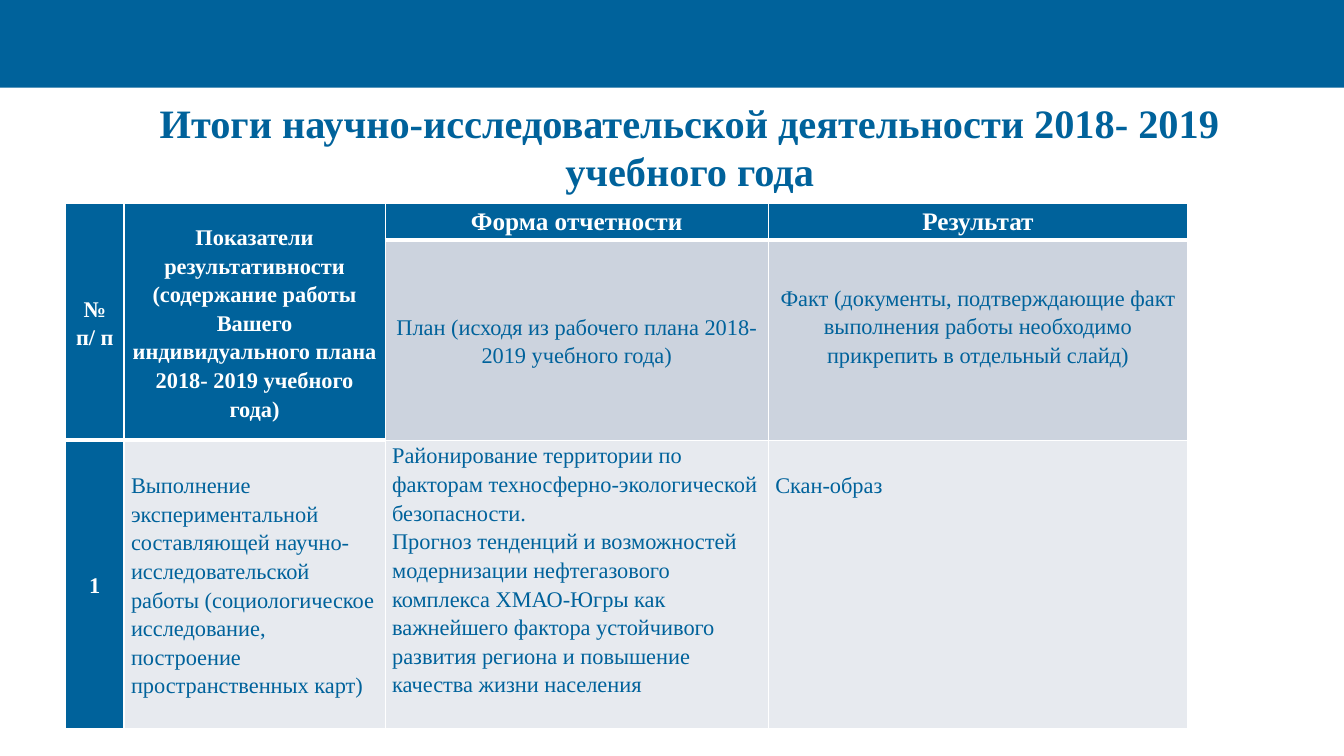
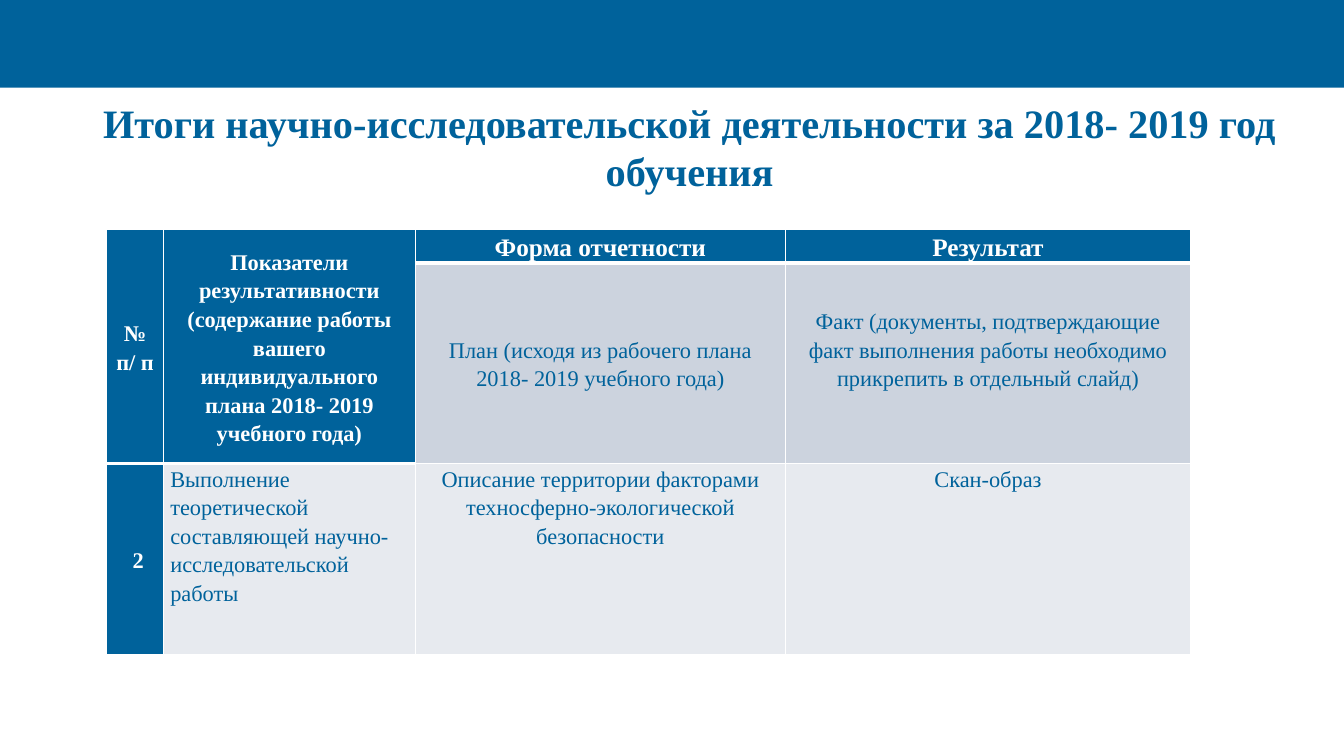
import pptx
import pptx.dml.color
import pptx.enum.shapes
import pptx.enum.text
import pptx.oxml
import pptx.oxml.ns
import pptx.util

Inches = pptx.util.Inches
Pt = pptx.util.Pt
ALIGN = pptx.enum.text.PP_ALIGN
ANCHOR = pptx.enum.text.MSO_ANCHOR

FONT = "Times New Roman"
BLUE, WHITE, GREY, PALE = "00629B", "FFFFFF", "CCD3DE", "E7EAEF"
INSET = 0.07
TEXT_LINE = 0.29
PLAN = "План (исходя из рабочего плана 2018- 2019 учебного года)"
FACT = ("Факт (документы, подтверждающие факт выполнения работы "
        "необходимо прикрепить в отдельный слайд)")
INDICATORS = ("Показатели результативности\n(содержание работы {} "
              "индивидуального плана 2018- 2019 учебного года)")


def rgb(color):
    """Turn a hex string into a colour."""
    return pptx.dml.color.RGBColor.from_string(color)


def write(tf, text, size=16, color=BLUE, bold=False, align=ALIGN.CENTER, spacing=1.15):
    """Fill a text frame with one formatted paragraph per line of text."""
    tf.word_wrap = True
    for i, line in enumerate(text.split("\n")):
        p = tf.paragraphs[0] if i == 0 else tf.add_paragraph()
        p.alignment, p.line_spacing = align, spacing
        p.space_before = Pt(0)
        r = p.add_run()
        r.text = line
        r.font.name, r.font.size, r.font.bold = FONT, Pt(size), bold
        r.font.color.rgb = rgb(color)


def add_borders(cell, top, bottom):
    """Give a cell white borders, with its own widths at top and bottom."""
    tcPr = cell._tc.get_or_add_tcPr()
    ns = pptx.oxml.ns.nsdecls("a")
    for i, (side, width) in enumerate(zip("LRTB", (1, 1, top, bottom))):
        tcPr.insert(i, pptx.oxml.parse_xml(
            f'<a:ln{side} {ns} w="{Pt(width)}"><a:solidFill>'
            f'<a:srgbClr val="{WHITE}"/></a:solidFill></a:ln{side}>'))


def fill_cell(cell, text, fill, anchor=ANCHOR.TOP, left=INSET, top=0, bottom=0, **fmt):
    """Write, place and colour the content of one cell."""
    cell.fill.solid()
    cell.fill.fore_color.rgb = rgb(fill)
    cell.vertical_anchor = anchor
    cell.margin_left, cell.margin_right = Inches(left), Inches(INSET)
    cell.margin_top, cell.margin_bottom = Inches(top), Inches(bottom)
    write(cell.text_frame, text, **fmt)


def add_report_table(s, x, y, cols, rows, whose, entries):
    """Add the table with its two-level heading and one row of entries."""
    tbl = s.shapes.add_table(3, 4, Inches(x), Inches(y),
                             Inches(sum(cols)), Inches(sum(rows))).table
    tbl.first_row = tbl.horz_banding = False
    for col, width in zip(tbl.columns, cols):
        col.width = Inches(width)
    for row, height in zip(tbl.rows, rows):
        row.height = Inches(height)
    for r in range(3):
        for c in range(4):
            head_end = 1 if c < 2 else 0
            add_borders(tbl.cell(r, c), 3 if r == head_end + 1 else 1,
                        3 if r <= head_end else 1)
    for c in range(2):
        tbl.cell(0, c).merge(tbl.cell(1, c))
    head = dict(fill=BLUE, color=WHITE, bold=True)
    middle = dict(anchor=ANCHOR.MIDDLE)
    fill_cell(tbl.cell(0, 0), "№ п/ п", **head, **middle)
    fill_cell(tbl.cell(0, 1), INDICATORS.format(whose), **head, **middle)
    fill_cell(tbl.cell(0, 2), "Форма отчетности", size=18, **head)
    fill_cell(tbl.cell(0, 3), "Результат", size=18, **head)
    fill_cell(tbl.cell(1, 2), PLAN, GREY, **middle)
    fill_cell(tbl.cell(1, 3), FACT, GREY, bottom=TEXT_LINE, **middle)
    number, *details = entries
    fill_cell(tbl.cell(2, 0), **number, **head, **middle)
    for c, entry in enumerate(details, 1):
        fill_cell(tbl.cell(2, c), fill=PALE, **entry)


def add_band(prs, layout, s):
    """Place the blue top band on the shared layout."""
    sp = s.shapes.add_shape(pptx.enum.shapes.MSO_SHAPE.RECTANGLE, 0, 0,
                            prs.slide_width, Inches(0.87))
    sp.shadow.inherit = False
    sp.fill.solid()
    sp.fill.fore_color.rgb = rgb(BLUE)
    sp.line.fill.background()
    layout.shapes.element.insert(2, sp.element)


def add_report_slide(prs, layout, title, **table):
    """Add a titled slide with a report table."""
    s = prs.slides.add_slide(layout)
    sp = s.shapes.title
    sp.left, sp.top, sp.width, sp.height = map(Inches, (0.84, 1, 12, 0.9))
    sp.text_frame.vertical_anchor = ANCHOR.MIDDLE
    sp.text_frame.auto_size = pptx.enum.text.MSO_AUTO_SIZE.NONE
    write(sp.text_frame, title, size=28.8, bold=True, spacing=1.0)
    add_report_table(s, **table)
    return s


def main():
    """Build and save the presentation."""
    prs = pptx.Presentation()
    prs.slide_width, prs.slide_height = Inches(13.33), Inches(7.5)
    layout = prs.slide_layouts[5]
    left = dict(align=ALIGN.LEFT)
    s = add_report_slide(
        prs, layout,
        "Итоги научно-исследовательской деятельности 2018- 2019 учебного года",
        x=0.65, y=2.02, cols=(0.58, 2.59, 3.8, 4.16), rows=(0.36, 1.98, 2.86),
        whose="Вашего",
        entries=(
            dict(text="1"),
            dict(text="Выполнение экспериментальной составляющей "
                      "научно-исследовательской работы (социологическое исследование, "
                      "построение пространственных карт)",
                 anchor=ANCHOR.MIDDLE, **left),
            dict(text="Районирование территории по факторам "
                      "техносферно-экологической безопасности.\n"
                      "Прогноз тенденций и возможностей модернизации нефтегазового "
                      "комплекса ХМАО-Югры как важнейшего фактора устойчивого "
                      "развития региона и повышение качества жизни населения", **left),
            dict(text="Скан-образ", top=TEXT_LINE, **left)))
    add_band(prs, layout, s)
    add_report_slide(
        prs, layout,
        "Итоги научно-исследовательской деятельности за 2018- 2019 год обучения",
        x=1.06, y=2.28, cols=(0.56, 2.5, 3.67, 4.02), rows=(0.33, 1.97, 1.9),
        whose="вашего",
        entries=(
            dict(text="2", left=0.13),
            dict(text="Выполнение теоретической составляющей "
                      "научно-исследовательской работы", **left),
            dict(text="Описание территории факторами "
                      "техносферно-экологической безопасности"),
            dict(text="Скан-образ")))
    prs.save("out.pptx")


if __name__ == "__main__":
    main()
